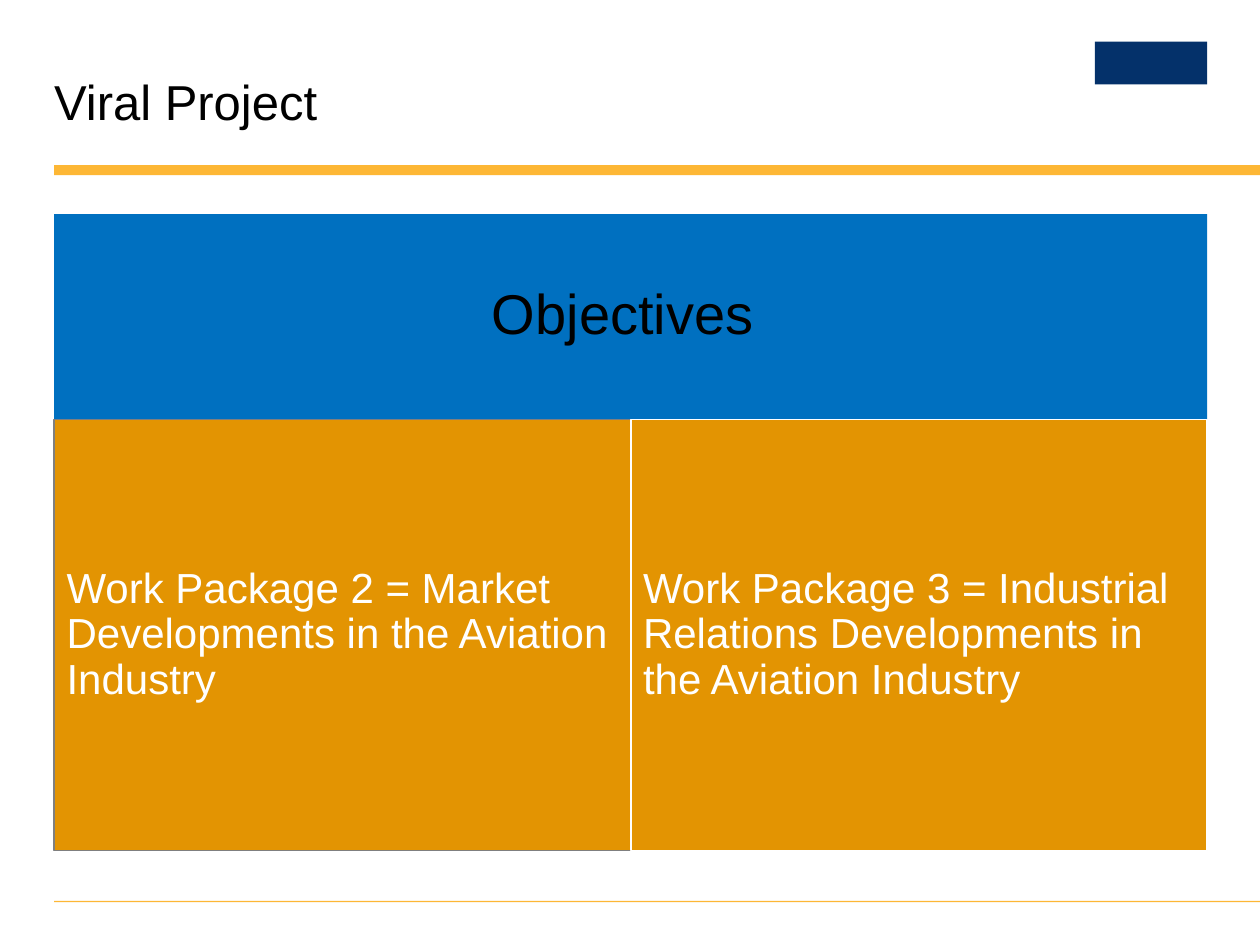
from dataclasses import dataclass
from typing import Optional

import pptx
import pptx.dml.color
import pptx.enum.shapes
import pptx.enum.text
import pptx.util

Inches = pptx.util.Inches
Pt = pptx.util.Pt
RGBColor = pptx.dml.color.RGBColor
Align = pptx.enum.text.PP_ALIGN
Anchor = pptx.enum.text.MSO_ANCHOR

BLACK = RGBColor(0x00, 0x00, 0x00)
WHITE = RGBColor(0xFF, 0xFF, 0xFF)
GREY = RGBColor(0x7F, 0x7F, 0x7F)
GOLD = RGBColor(0xFD, 0xB7, 0x35)
AMBER = RGBColor(0xE3, 0x94, 0x02)
BLUE = RGBColor(0x00, 0x70, 0xC0)
NAVY = RGBColor(0x04, 0x31, 0x6A)

LEFT, WIDTH = 0.43, 9.15
HALF = WIDTH / 2
HEAD_TOP, HEAD_HIGH = 1.7, 1.63
PACK_TOP, PACK_HIGH = HEAD_TOP + HEAD_HIGH, 3.42


@dataclass
class Block:
    left: float
    top: float
    width: float
    height: float
    fill: RGBColor
    line: Optional[RGBColor] = None
    text: str = ""
    size: int = 24
    color: RGBColor = WHITE
    align: Align = Align.LEFT
    inset: float = 0.1


BLOCKS = [
    Block(LEFT, 1.31, 10 - LEFT, 0.08, GOLD),
    Block(LEFT, 7.15, 10 - LEFT, 0.01, GOLD),
    Block(8.69, 0.33, 0.89, 0.34, NAVY),
    Block(LEFT, HEAD_TOP, WIDTH, HEAD_HIGH, BLUE, None,
          "Objectives ", 32, BLACK, Align.CENTER, 0.13),
    Block(LEFT, PACK_TOP, HALF, PACK_HIGH, AMBER, GREY,
          "Work Package 2 = Market Developments in the Aviation Industry"),
    Block(LEFT + HALF, PACK_TOP, HALF, PACK_HIGH, AMBER, WHITE,
          "Work Package 3 = Industrial Relations Developments in the Aviation Industry"),
]


def set_text(frame, text: str, size: int, color: RGBColor, align: Align) -> None:
    frame.text = text
    frame.word_wrap = True
    para = frame.paragraphs[0]
    para.alignment = align
    para.line_spacing = 0.9
    para.font.name = "Arial"
    para.font.size = Pt(size)
    para.font.color.rgb = color


def set_inset(frame, left: float, top: float, right: float, bottom: float) -> None:
    frame.margin_left, frame.margin_top = Inches(left), Inches(top)
    frame.margin_right, frame.margin_bottom = Inches(right), Inches(bottom)


def draw_block(slide, block: Block) -> None:
    shape = slide.shapes.add_shape(
        pptx.enum.shapes.MSO_SHAPE.RECTANGLE, Inches(block.left),
        Inches(block.top), Inches(block.width), Inches(block.height))
    shape.shadow.inherit = False
    shape.fill.solid()
    shape.fill.fore_color.rgb = block.fill
    if block.line is None:
        shape.line.fill.background()
    else:
        shape.line.color.rgb = block.line
        shape.line.width = Pt(1)
    if block.text:
        frame = shape.text_frame
        set_text(frame, block.text, block.size, block.color, block.align)
        set_inset(frame, *[block.inset] * 4)
        frame.vertical_anchor = Anchor.MIDDLE


def draw_title(slide, text: str) -> None:
    title = slide.shapes.title
    title.left, title.top = Inches(LEFT), Inches(0.33)
    title.width, title.height = Inches(5.61), Inches(1.64)
    frame = title.text_frame
    set_text(frame, text, 28, BLACK, Align.LEFT)
    set_inset(frame, 0, 0.29, 0, 0)
    frame.vertical_anchor = Anchor.TOP
    frame.auto_size = pptx.enum.text.MSO_AUTO_SIZE.NONE


def main() -> None:
    deck = pptx.Presentation()
    deck.slide_width, deck.slide_height = Inches(10), Inches(7.5)
    slide = deck.slides.add_slide(deck.slide_layouts.get_by_name("Title Only"))
    draw_title(slide, "Viral Project")
    for block in BLOCKS:
        draw_block(slide, block)
    deck.save("out.pptx")


if __name__ == "__main__":
    main()
